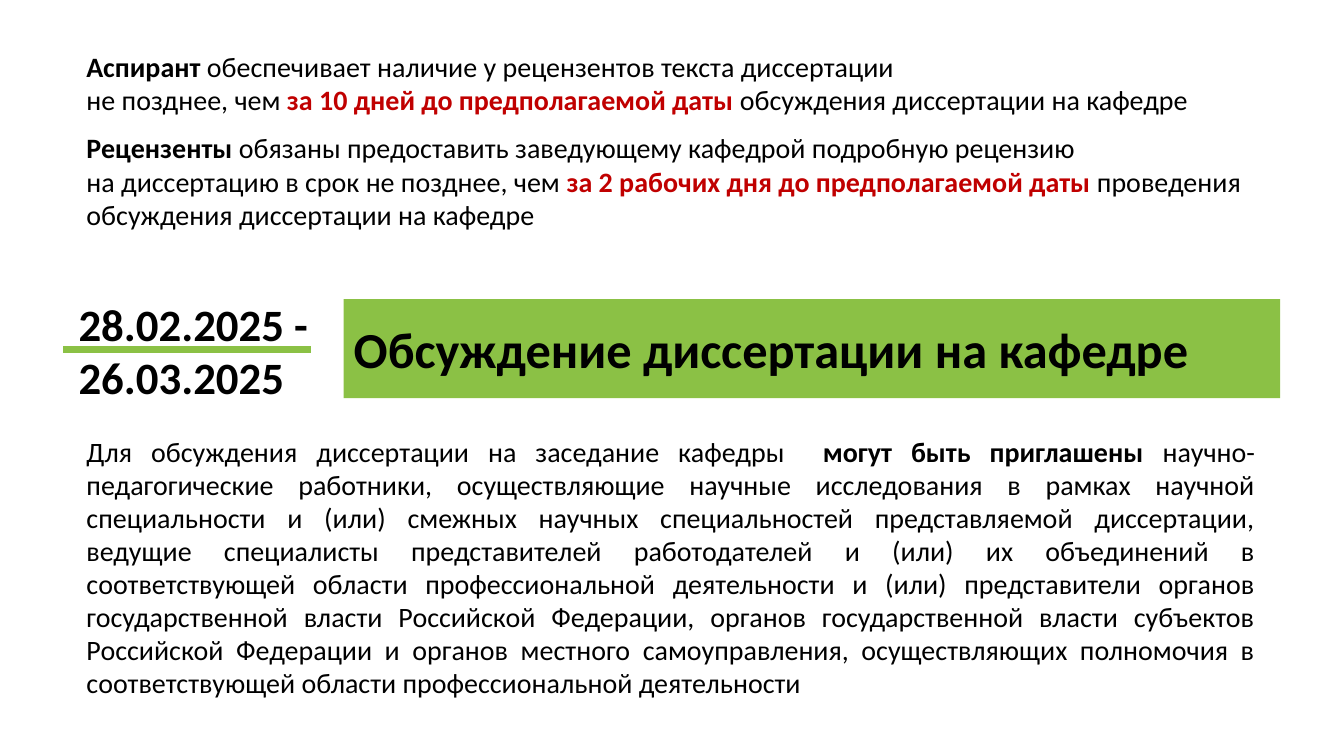
import pptx
import pptx.util
import pptx.dml.color
import pptx.enum.shapes
import pptx.enum.text
import pptx.oxml

Cm = pptx.util.Cm
Pt = pptx.util.Pt
ALIGN = pptx.enum.text.PP_ALIGN
GREEN, RED, BLACK = "8BC145", "C00000", "000000"


def rgb(value):
    return pptx.dml.color.RGBColor.from_string(value)


class SlideBuilder:
    font = "Calibri"

    def __init__(self, prs):
        self.s = prs.slides.add_slide(prs.slide_layouts[5])

    def style(self, r, size, bold=False, color=BLACK):
        r.font.name = self.font
        r.font.size = Pt(size)
        r.font.bold = bold
        r.font.color.rgb = rgb(color)

    def place(self, sp, left, top, width, height):
        sp.left, sp.top, sp.width, sp.height = Cm(left), Cm(top), Cm(width), Cm(height)

    def title(self, text, box, size, fill):
        sp = self.s.shapes.title
        self.place(sp, *box)
        sp.fill.solid()
        sp.fill.fore_color.rgb = rgb(fill)
        tf = sp.text_frame
        tf.text = text
        tf.auto_size = pptx.enum.text.MSO_AUTO_SIZE.NONE
        tf.vertical_anchor = pptx.enum.text.MSO_ANCHOR.MIDDLE
        p = tf.paragraphs[0]
        p.alignment = ALIGN.JUSTIFY
        self.style(p.runs[0], size, True)

    def text(self, paragraphs, box, size, align=ALIGN.LEFT, after=0, spacing=1.0):
        tf = self.s.shapes.add_textbox(*map(Cm, box)).text_frame
        tf.word_wrap = True
        tf.auto_size = pptx.enum.text.MSO_AUTO_SIZE.SHAPE_TO_FIT_TEXT
        for i, pieces in enumerate(paragraphs):
            p = tf.add_paragraph() if i else tf.paragraphs[0]
            p.alignment = align
            p.space_after = Pt(after)
            p.line_spacing = spacing
            for text, *look in pieces:
                for j, line in enumerate(text.split("\n")):
                    if j:
                        p.add_line_break()
                    r = p.add_run()
                    r.text = line
                    self.style(r, size, *look)

    def line(self, x1, y1, x2, y2, color, width):
        kind = pptx.enum.shapes.MSO_CONNECTOR.STRAIGHT
        sp = self.s.shapes.add_connector(kind, Cm(x1), Cm(y1), Cm(x2), Cm(y2))
        sp.line.color.rgb = rgb(color)
        sp.line.width = Pt(width)
        effects = pptx.oxml.parse_xml(
            '<a:effectLst xmlns:a="http://schemas.openxmlformats.org/drawingml/2006/main"/>')
        sp.element.spPr.append(effects)


def main():
    prs = pptx.Presentation()
    prs.slide_width, prs.slide_height = Cm(33.87), Cm(19.05)
    slide = SlideBuilder(prs)

    slide.line(1.6, 8.81, 7.85, 8.81, GREEN, 5.25)
    slide.text([
        [("Аспирант ", True),
         ("обеспечивает наличие у рецензентов текста диссертации \nне позднее, чем ",),
         ("за 10 дней до предполагаемой даты ", True, RED),
         ("обсуждения диссертации на кафедре",)],
        [("Рецензенты", True),
         (" обязаны предоставить заведующему кафедрой подробную рецензию \n"
          "на диссертацию в срок не позднее, чем ",),
         ("за 2 рабочих дня до предполагаемой даты ", True, RED),
         ("проведения обсуждения диссертации на кафедре",)],
    ], (1.93, 1.12, 29.77, 4.88), 20, after=10)
    slide.text([
        [("Для обсуждения диссертации на заседание кафедры  ",),
         ("могут быть приглашены", True),
         (" научно-педагогические работники, осуществляющие научные исследования "
          "в рамках научной специальности и (или) смежных научных специальностей "
          "представляемой диссертации, ведущие специалисты представителей работодателей "
          "и (или) их объединений в соответствующей области профессиональной деятельности "
          "и (или) представители органов государственной власти Российской Федерации, "
          "органов государственной власти субъектов Российской Федерации и органов "
          "местного самоуправления, осуществляющих полномочия в соответствующей области "
          "профессиональной деятельности",)],
    ], (1.93, 10.87, 29.95, 6.96), 20, ALIGN.JUSTIFY, after=12, spacing=0.98)
    slide.text([[("28.02.2025 - 26.03.2025", True)]], (1.73, 7.34, 6.43, 3), 32)
    slide.title("Обсуждение диссертации на кафедре", (8.66, 7.54, 23.6, 2.49), 36, GREEN)

    prs.save("out.pptx")


if __name__ == "__main__":
    main()
